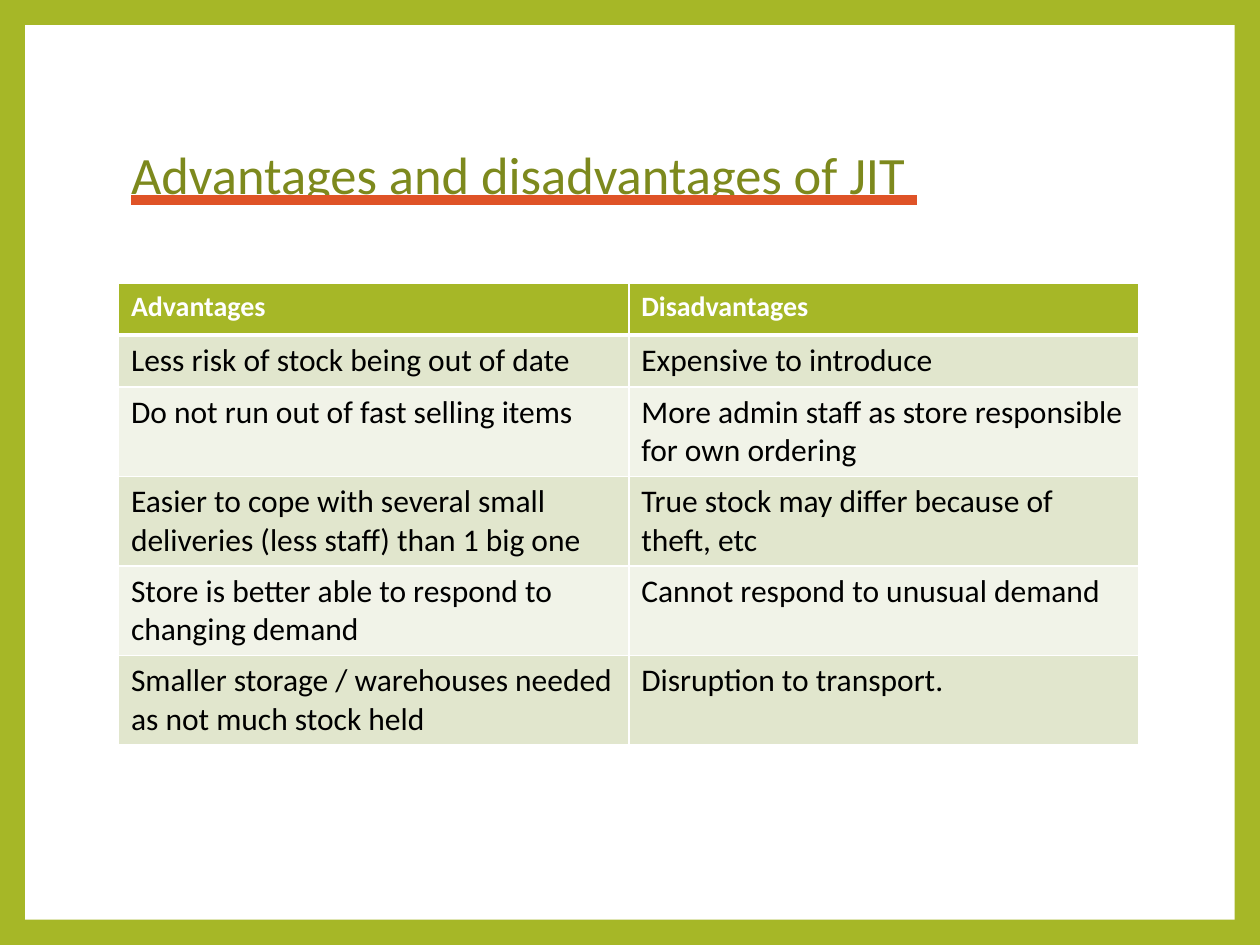
"""Build the slide on the advantages and disadvantages of JIT."""
from dataclasses import dataclass

from lxml import etree
from pptx import Presentation
from pptx.dml.color import RGBColor
from pptx.enum.shapes import MSO_SHAPE
from pptx.enum.text import MSO_ANCHOR, MSO_UNDERLINE, PP_ALIGN
from pptx.oxml.ns import qn
from pptx.util import Inches, Pt

RECTANGLE = MSO_SHAPE.RECTANGLE
MIDDLE = MSO_ANCHOR.MIDDLE
HEAVY = MSO_UNDERLINE.HEAVY_LINE
LEFT = PP_ALIGN.LEFT
TITLE_ONLY = 5


@dataclass(frozen=True)
class Theme:
    """Colours, font and type sizes of the slide."""
    font: str = "Calibri"
    accent: str = "A6B727"
    paper: str = "FFFFFF"
    title: str = "7D891D"
    underline: str = "DF5327"
    text: str = "000000"
    bands: tuple[str, str] = ("E1E6CD", "F1F3E8")
    title_size: int = 30
    header_size: int = 16
    body_size: int = 18


@dataclass(frozen=True)
class CellStyle:
    """Look of one table cell."""
    fill: str
    color: str
    size: int
    bold: bool = False
    bottom: int = 1


@dataclass(frozen=True)
class Row:
    """One advantage beside one disadvantage."""
    advantage: str
    disadvantage: str


THEME = Theme()
MARGIN = 0.2
LEFT_EDGE, CONTENT_WIDTH = 0.94, 8.1
ROW_HEIGHT = 0.41
ROWS = [
    Row("Advantages", "Disadvantages"),
    Row("Less risk of stock being out of date", "Expensive to introduce"),
    Row("Do not run out of fast selling items",
        "More admin staff as store responsible for own ordering"),
    Row("Easier to cope with several small deliveries (less staff) than 1 big one",
        "True stock may differ because of theft, etc"),
    Row("Store is better able to respond to changing demand",
        "Cannot respond to unusual demand"),
    Row("Smaller storage / warehouses needed as not much stock held",
        "Disruption to transport."),
]


def rgb(color: str) -> RGBColor:
    """Turn a hex string into a colour."""
    return RGBColor.from_string(color)


def add_solid_fill(parent, color: str) -> None:
    """Append a solid fill element to an XML parent."""
    fill = etree.SubElement(parent, qn("a:solidFill"))
    etree.SubElement(fill, qn("a:srgbClr"), val=color)


def format_run(r, color: str, size: int, bold: bool = False) -> None:
    """Set the font of a run."""
    r.font.name = THEME.font
    r.font.size = Pt(size)
    r.font.bold = bold
    r.font.color.rgb = rgb(color)


def add_frame(s, width: float, height: float) -> None:
    """Colour the background and lay the white page on it."""
    s.background.fill.solid()
    s.background.fill.fore_color.rgb = rgb(THEME.accent)
    sp = s.shapes.add_shape(RECTANGLE, Inches(MARGIN), Inches(MARGIN),
                            Inches(width - 2 * MARGIN), Inches(height - 2 * MARGIN))
    sp.shadow.inherit = False
    sp.fill.solid()
    sp.fill.fore_color.rgb = rgb(THEME.paper)
    sp.line.fill.background()
    s.shapes.title.element.addprevious(sp.element)


def set_title(s, text: str) -> None:
    """Fill the title placeholder and underline it in the accent colour."""
    sp = s.shapes.title
    sp.left, sp.top = Inches(LEFT_EDGE), Inches(0.67)
    sp.width, sp.height = Inches(CONTENT_WIDTH), Inches(1.48)
    tf = sp.text_frame
    tf.text = text
    tf.word_wrap = True
    tf.vertical_anchor = MIDDLE
    p = tf.paragraphs[0]
    p.alignment = LEFT
    p.line_spacing = 0.9
    r = p.runs[0]
    format_run(r, THEME.title, THEME.title_size)
    r.font.underline = HEAVY
    r_pr = r.font._element
    u_fill = etree.Element(qn("a:uFill"))
    add_solid_fill(u_fill, THEME.underline)
    r_pr.find(qn("a:solidFill")).addnext(u_fill)


def set_borders(cell, bottom: int) -> None:
    """Draw white borders round a cell."""
    tc_pr = cell._tc.get_or_add_tcPr()
    widths = {"a:lnL": 1, "a:lnR": 1, "a:lnT": 1, "a:lnB": bottom}
    for i, (tag, width) in enumerate(widths.items()):
        ln = etree.Element(qn(tag), w=str(Pt(width)))
        add_solid_fill(ln, THEME.paper)
        tc_pr.insert(i, ln)


def set_cell(cell, text: str, style: CellStyle) -> None:
    """Write and style one cell."""
    cell.text = text
    cell.fill.solid()
    cell.fill.fore_color.rgb = rgb(style.fill)
    format_run(cell.text_frame.paragraphs[0].runs[0],
               style.color, style.size, style.bold)
    set_borders(cell, style.bottom)


def add_comparison(s, rows: list[Row]) -> None:
    """Add the two-column table with a header and banded rows."""
    table = s.shapes.add_table(len(rows), 2, Inches(LEFT_EDGE), Inches(2.25),
                               Inches(CONTENT_WIDTH),
                               Inches(ROW_HEIGHT * len(rows))).table
    header = CellStyle(THEME.accent, THEME.paper, THEME.header_size, True, 3)
    bands = [CellStyle(fill, THEME.text, THEME.body_size) for fill in THEME.bands]
    for i, row in enumerate(rows):
        style = bands[(i - 1) % 2] if i else header
        for j, text in enumerate((row.advantage, row.disadvantage)):
            set_cell(table.cell(i, j), text, style)


def main() -> None:
    """Build and save the slide."""
    width, height = 10, 7.5
    prs = Presentation()
    prs.slide_width, prs.slide_height = Inches(width), Inches(height)
    s = prs.slides.add_slide(prs.slide_layouts[TITLE_ONLY])
    add_frame(s, width, height)
    set_title(s, "Advantages and disadvantages of JIT ")
    add_comparison(s, ROWS)
    prs.save("out.pptx")


if __name__ == "__main__":
    main()
